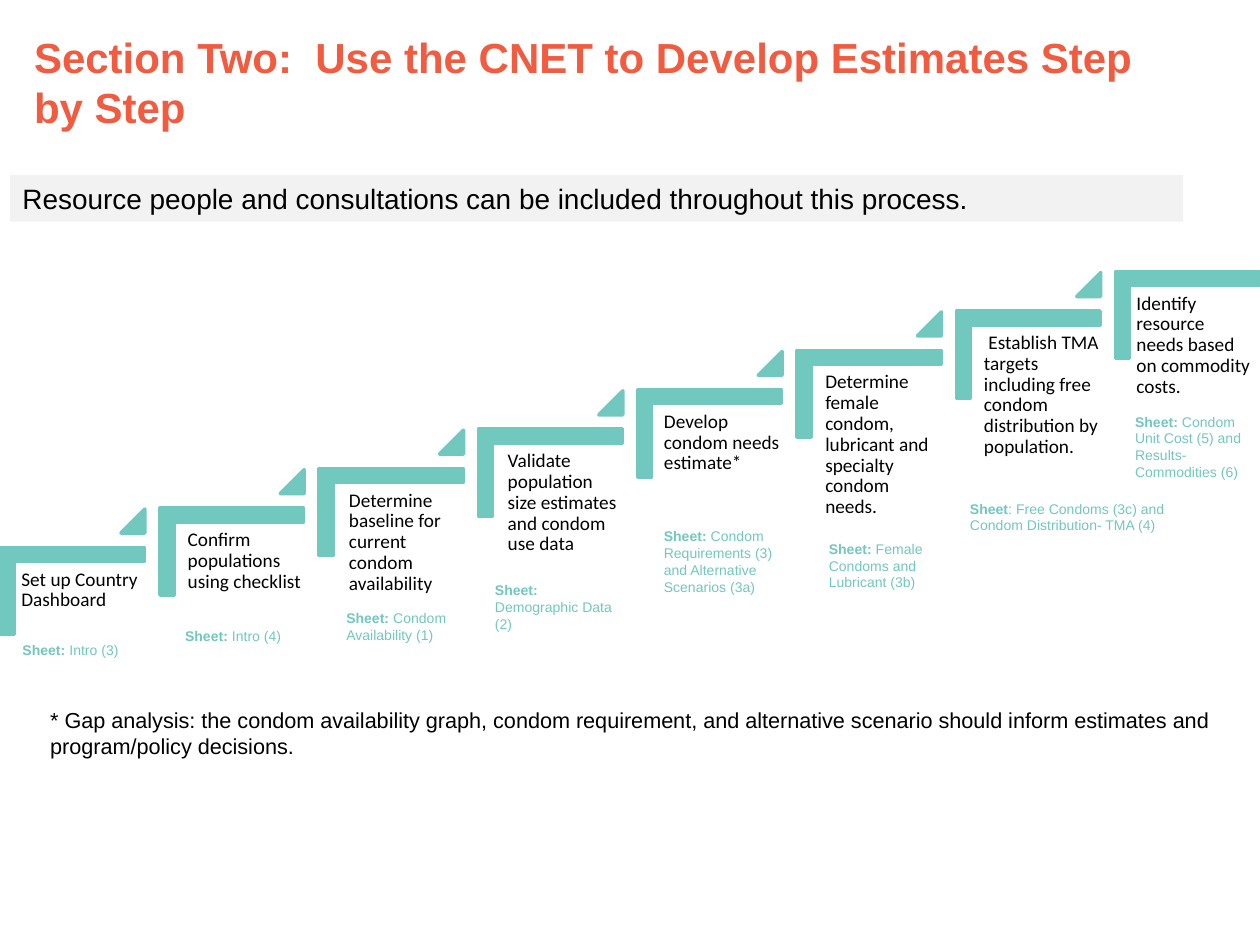
from pptx import Presentation
from pptx.dml.color import RGBColor
from pptx.enum.shapes import MSO_SHAPE
from pptx.enum.text import MSO_ANCHOR, MSO_AUTO_SIZE, PP_ALIGN
from pptx.util import Inches, Pt

CORNER, TRIANGLE, RECTANGLE = MSO_SHAPE.CORNER, MSO_SHAPE.ISOSCELES_TRIANGLE, MSO_SHAPE.RECTANGLE
TOP, LEFT = MSO_ANCHOR.TOP, PP_ALIGN.LEFT
FIXED, GROW = MSO_AUTO_SIZE.NONE, MSO_AUTO_SIZE.SHAPE_TO_FIT_TEXT
TEAL, CORAL, GRAY, BLACK = "70C8BE", "F15B40", "F2F2F2", "000000"

WIDTH, HEIGHT = 10, 7.5
TITLE = "Section Two:  Use the CNET to Develop Estimates Step by Step"
BANNER = "Resource people and consultations can be included throughout this process."
FOOTNOTE = ("* Gap analysis: the condom availability graph, condom requirement, and alternative "
            "scenario should inform estimates and program/policy decisions.")

STEPS = [
    (0.12, "Set up Country Dashboard"),
    (1.44, "Confirm populations using checklist"),
    (2.72, "Determine baseline for current condom availability"),
    (3.98, "Validate population size estimates and condom use data"),
    (5.22, "Develop condom needs estimate*"),
    (6.5, "Determine female condom, lubricant and specialty condom needs."),
    (7.76, " Establish TMA targets including free condom distribution by population."),
    (8.97, "Identify resource needs based on commodity costs."),
]
SHEETS = [
    ((0.08, 5.04, 1.41, 0.24), "Sheet: ", "Intro (3)"),
    ((1.37, 4.93, 1.41, 0.24), "Sheet: ", "Intro (4)"),
    ((2.65, 4.79, 1.47, 0.37), "Sheet: ", "Condom Availability (1)"),
    ((3.83, 4.57, 1.2, 0.5), "Sheet:", " Demographic Data (2)"),
    ((5.17, 4.14, 1.07, 0.77), "Sheet: ", "Condom Requirements (3) and Alternative Scenarios (3a)"),
    ((6.48, 4.24, 1.27, 0.5), "Sheet: ", "Female Condoms and Lubricant (3b)"),
    ((7.6, 3.92, 1.77, 0.37), "Sheet", ": Free Condoms (3c) and Condom Distribution- TMA (4)"),
    ((8.91, 3.23, 1.09, 0.64), "Sheet: ", "Condom Unit Cost (5) and Results-Commodities (6)"),
]
PITCH = 8.85 / (len(STEPS) - 1)
RISE = 2.19 / (len(STEPS) - 1)

STEP_FONT = {"name": "Calibri", "size": Pt(11)}
SHEET_FONT = {"name": "Arial", "size": Pt(8)}
TITLE_FONT = {"name": "Arial", "size": Pt(24), "bold": True}
BANNER_FONT = {"name": "Arial", "size": Pt(16)}
FOOTNOTE_FONT = {"name": "Arial", "size": Pt(12.4)}


def paint(color_format, value):
    color_format.rgb = RGBColor.from_string(value)


def place(shape, left, top, width, height):
    for name, value in zip(("left", "top", "width", "height"), (left, top, width, height)):
        setattr(shape, name, Inches(value))


def write(shape, spans, font, color=BLACK, size_mode=GROW, inset=None, spacing=None):
    frame = shape.text_frame
    settings = {"word_wrap": True, "auto_size": size_mode, "vertical_anchor": TOP}
    if inset is not None:
        settings.update({f"margin_{side}": Inches(inset) for side in ("left", "top", "right", "bottom")})
    for name, value in settings.items():
        setattr(frame, name, value)
    para = frame.paragraphs[0]
    para.alignment = LEFT
    if spacing:
        para.line_spacing = spacing
    for text, extra in spans:
        span = para.add_run()
        span.text = text
        for name, value in {**font, **extra}.items():
            setattr(span.font, name, value)
        paint(span.font.color, color)


def add_text(page, area, spans, font, **options):
    box = page.shapes.add_textbox(*map(Inches, area))
    write(box, spans, font, **options)


def add_block(page, kind, area, color, adjustments=(), outlined=True):
    shape = page.shapes.add_shape(kind, *map(Inches, area))
    shape.shadow.inherit = False
    for index, value in enumerate(adjustments):
        shape.adjustments[index] = value
    shape.fill.solid()
    paint(shape.fill.fore_color, color)
    if outlined:
        shape.line.width = Pt(2)
        paint(shape.line.color, color)
    else:
        shape.line.fill.background()
    return shape


def main():
    deck = Presentation()
    deck.slide_width, deck.slide_height = Inches(WIDTH), Inches(HEIGHT)
    page = deck.slides.add_slide(deck.slide_layouts[5])

    for index, (text_left, text) in enumerate(STEPS):
        across, up = index * PITCH, index * RISE
        corner = add_block(page, CORNER, (0.23 + across, 4.12 - up, 0.69, 1.14), TEAL, (0.16, 0.16))
        corner.rotation = 90
        add_text(page, (text_left, 4.47 - up, 1.03, 0.9), [(text, {})], STEP_FONT,
                 size_mode=FIXED, inset=0.05, spacing=0.9)
        if index < len(STEPS) - 1:
            add_block(page, TRIANGLE, (0.96 + across, 4.04 - up, 0.19, 0.19), TEAL, (1,))

    for area, label, sheet in SHEETS:
        add_text(page, area, [(label, {"bold": True}), (sheet, {"bold": False})], SHEET_FONT, color=TEAL)

    add_text(page, (0.3, 5.56, 9.48, 0.52), [(FOOTNOTE, {})], FOOTNOTE_FONT)
    banner = add_block(page, RECTANGLE, (0.08, 1.39, 9.31, 0.37), GRAY, outlined=False)
    write(banner, [(BANNER, {})], BANNER_FONT)

    title = page.shapes.title
    place(title, 0.17, 0.2, 8.94, 0.91)
    write(title, [(TITLE, {})], TITLE_FONT, color=CORAL)

    deck.save("out.pptx")


if __name__ == "__main__":
    main()
